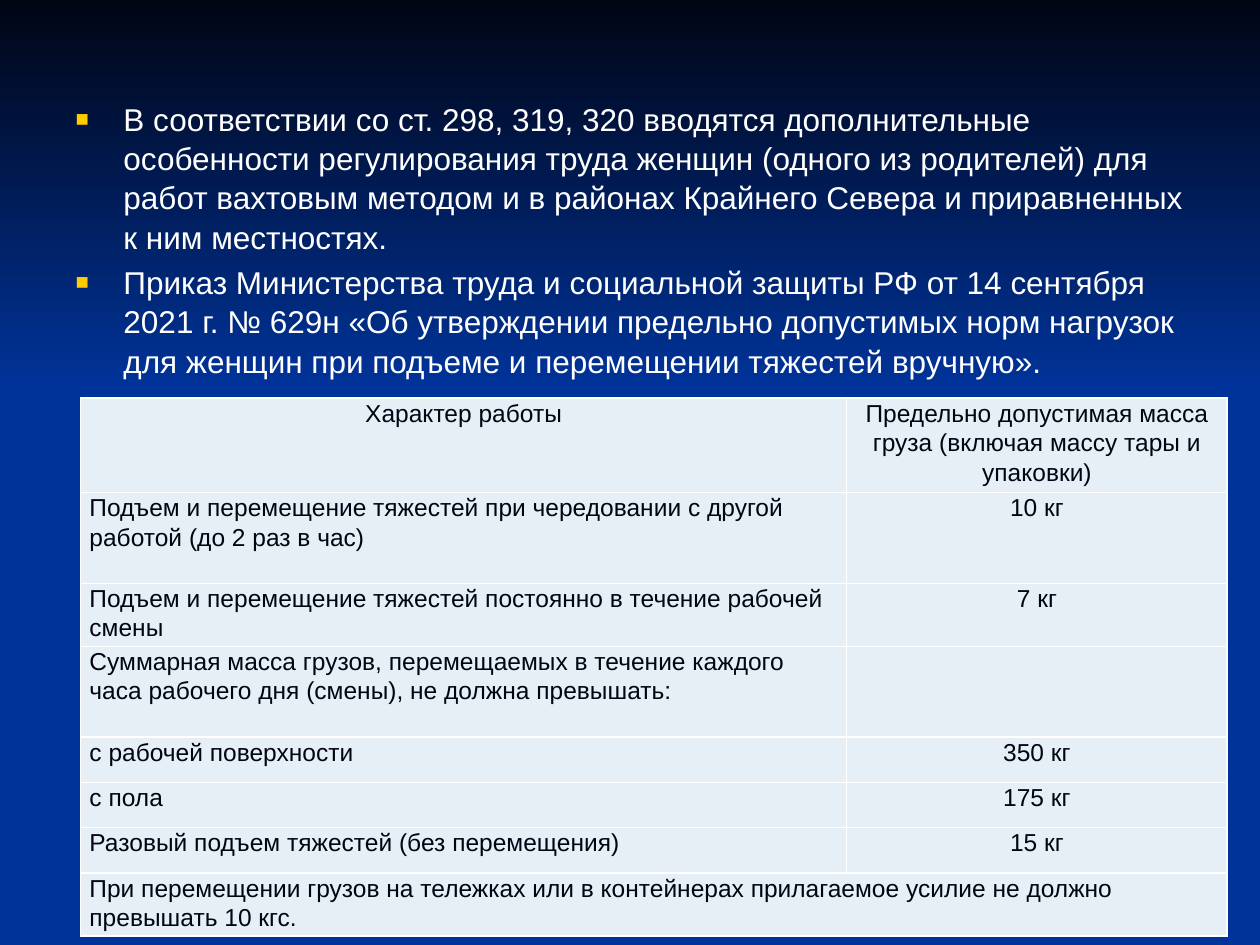
from pptx import Presentation
from pptx.util import Inches, Pt
from pptx.dml.color import RGBColor
from pptx.enum.shapes import MSO_SHAPE
from pptx.enum.text import MSO_AUTO_SIZE, PP_ALIGN
from pptx.oxml import parse_xml
from pptx.oxml.ns import nsdecls

# Content
POINTS = [
    "В соответствии со ст. 298, 319, 320 вводятся дополнительные особенности регулирования труда женщин (одного из родителей) для работ вахтовым методом и в районах Крайнего Севера и приравненных к ним местностях.",
    "Приказ Министерства труда и социальной защиты РФ от 14 сентября 2021 г. № 629н «Об утверждении предельно допустимых норм нагрузок для женщин при подъеме и перемещении тяжестей вручную».",
]
LOADS = [  # work, limit, row height
    ("Характер работы", "Предельно допустимая масса груза (включая массу тары и упаковки)", 0.75),
    ("Подъем и перемещение тяжестей при чередовании с другой работой (до 2 раз в час)", "10 кг", 0.72),
    ("Подъем и перемещение тяжестей постоянно в течение рабочей смены", "7 кг", 0.5),
    ("Суммарная масса грузов, перемещаемых в течение каждого часа рабочего дня (смены), не должна превышать:", "", 0.72),
    ("с рабочей поверхности", "350 кг", 0.36),
    ("с пола", "175 кг", 0.36),
    ("Разовый подъем тяжестей (без перемещения)", "15 кг", 0.36),
    ("При перемещении грузов на тележках или в контейнерах прилагаемое усилие не должно превышать 10 кгс.", "", 0.5),
]
COLS = (6.08, 3.02)
WAVES = [  # outline, start colour, end colour, angle
    ([(5.03, 7.49), (5.71, 7.49), (6.14, 7.26), (6.7, 7.02), (7.52, 6.72), (8.61, 6.4),
      (9.98, 6.09), (9.98, 5.81), (9.63, 5.94), (8.67, 6.2), (7.64, 6.47), (6.3, 6.93),
      (5.69, 7.19)], "002F8C", "003399", 270),
    ([(7.81, 4.6), (7.86, 4.74), (8.26, 4.96), (8.05, 4.72), (8.28, 4.53), (8.96, 4.35),
      (9.98, 4.2), (9.98, 4.02), (9.33, 4.15), (8.35, 4.3), (7.91, 4.47)],
     "003091", "003399", 315),
]


def rgb(code):
    return RGBColor.from_string(code)


def style(para, size, color):
    for name, value in {"name": "Arial", "size": Pt(size)}.items():
        setattr(para.font, name, value)
    para.font.color.rgb = rgb(color)


def shade(shape, start, end, angle):
    shape.shadow.inherit = False
    shape.line.fill.background()
    shape.fill.gradient()
    shape.fill.gradient_angle = angle
    for stop, code, pos in zip(shape.fill.gradient_stops, (start, end), (0, 1)):
        stop.color.rgb = rgb(code)
        stop.position = pos
    body._element.addprevious(shape._element)  # keep behind the text


def edge(cell):
    props = cell._tc.get_or_add_tcPr()
    for n, side in enumerate(("lnL", "lnR", "lnT", "lnB")):
        props.insert(n, parse_xml(
            f'<a:{side} {nsdecls("a")} w="12700"><a:solidFill>'
            f'<a:srgbClr val="FFFFFF"/></a:solidFill></a:{side}>'))


prs = Presentation()
prs.slide_width, prs.slide_height = Inches(10), Inches(7.5)
slide = prs.slides.add_slide(prs.slide_layouts[1])
slide.background.fill.solid()
slide.background.fill.fore_color.rgb = rgb("003399")
title, body = slide.placeholders
title._element.getparent().remove(title._element)

# Backdrop: waves and dark top
for outline, start, end, angle in WAVES:
    pen = slide.shapes.build_freeform(*outline[0], scale=Inches(1))
    pen.add_line_segments(outline[1:])
    shade(pen.convert_to_shape(), start, end, angle)
top = slide.shapes.add_shape(MSO_SHAPE.RECTANGLE, 0, 0, prs.slide_width, Inches(3.08))
shade(top, "000514", "003399", 270)

# Bulleted text
box = {"left": 0.5, "top": 0.73, "width": 9.1, "height": 6.08}
for name, value in box.items():
    setattr(body, name, Inches(value))
frame = body.text_frame
frame.auto_size = MSO_AUTO_SIZE.NONE
frame.text = "\n".join(POINTS)
for para in frame.paragraphs:
    style(para, 18, "FFFFFF")
    para.space_before, para.line_spacing = Pt(3.6), 1.04
    props = para._p.get_or_add_pPr()
    props.set("marL", str(Inches(0.38)))
    props.set("indent", str(-Inches(0.38)))
    for xml in ('buClr {}><a:srgbClr val="FFCC00"/></a:buClr>', 'buSzPct {} val="70000"/>',
                'buFont {} typeface="Arial"/>', 'buChar {} char="■"/>'):
        props.insert_element_before(parse_xml("<a:" + xml.format(nsdecls("a"))),
                                    "a:tabLst", "a:defRPr", "a:extLst")

# Load limits table
grid = slide.shapes.add_table(
    len(LOADS), len(COLS), Inches(0.64), Inches(3.16), Inches(sum(COLS)),
    Inches(sum(row[-1] for row in LOADS))).table
for col, width in zip(grid.columns, COLS):
    col.width = Inches(width)
for r, (work, limit, height) in enumerate(LOADS):
    grid.rows[r].height = Inches(height)
    for c, text in enumerate((work, limit)):
        cell = grid.cell(r, c)
        cell.text = text
        cell.margin_left = cell.margin_right = Inches(0.07)
        cell.margin_top = cell.margin_bottom = 0
        cell.fill.solid()
        cell.fill.fore_color.rgb = rgb("E7EFF6")
        edge(cell)
        para = cell.text_frame.paragraphs[0]
        style(para, 14, "000514")
        para.font.bold = False
        para.line_spacing = 1.07
        para.alignment = PP_ALIGN.CENTER if c or not r else PP_ALIGN.LEFT
last = len(LOADS) - 1
grid.cell(last, 0).merge(grid.cell(last, 1))

prs.save("out.pptx")
